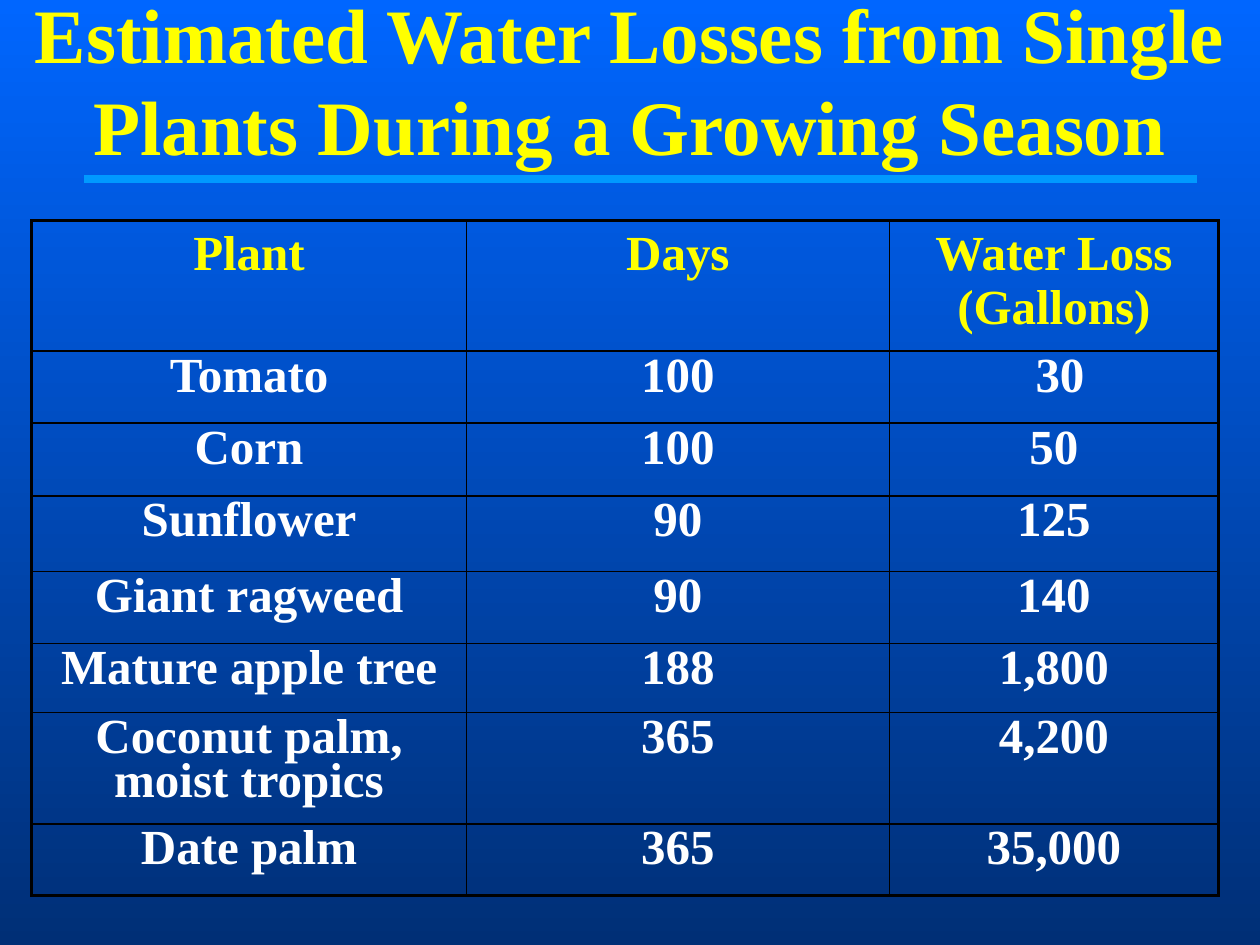
from lxml.etree import SubElement
from pptx import Presentation
from pptx.dml.color import RGBColor
from pptx.enum.shapes import MSO_CONNECTOR
from pptx.enum.text import MSO_ANCHOR, PP_ALIGN
from pptx.oxml.ns import qn
from pptx.util import Cm, Pt

BLUE_TOP = RGBColor(0x00, 0x66, 0xFF)
BLUE_BOTTOM = RGBColor(0x00, 0x2F, 0x76)
RULE_BLUE = RGBColor(0x00, 0x99, 0xFF)
YELLOW = RGBColor(0xFF, 0xFF, 0x00)
WHITE = RGBColor(0xFF, 0xFF, 0xFF)
BLACK = RGBColor(0x00, 0x00, 0x00)
FONT = "Times New Roman"

WATER_LOSSES = [
    ("Plant", "Days", "Water Loss (Gallons)"),
    ("Tomato", "100", " 30"),
    ("Corn", "100", "50"),
    ("Sunflower", "90", "125"),
    ("Giant ragweed", "90", "140"),
    ("Mature apple tree", "188", "1,800"),
    ("Coconut palm, moist tropics", "365", "4,200"),
    ("Date palm", "365", "35,000"),
]
COLUMN_WIDTHS = [8.76, 8.53, 6.63]
ROW_HEIGHTS = [2.54, 1.45, 1.47, 1.52, 1.45, 1.4, 2.24, 1.45]


def write_centred(paragraph, text, size, color):
    paragraph.alignment = PP_ALIGN.CENTER
    run = paragraph.add_run()
    run.text = text
    run.font.name = FONT
    run.font.size = Pt(size)
    run.font.bold = True
    run.font.color.rgb = color


def add_border(cell, side, width):
    """Draw one cell edge; side is L, R, T or B, called in that order."""
    edge = SubElement(cell._tc.get_or_add_tcPr(), qn(f"a:ln{side}"), w=str(Pt(width)))
    edge_fill = SubElement(edge, qn("a:solidFill"))
    SubElement(edge_fill, qn("a:srgbClr"), val=str(BLACK))


prs = Presentation()
prs.slide_width, prs.slide_height = Cm(25.4), Cm(19.05)
slide = prs.slides.add_slide(prs.slide_layouts[6])

backdrop = slide.background.fill
backdrop.gradient()
backdrop.gradient_angle = 270
for stop, color in zip(backdrop.gradient_stops, (BLUE_TOP, BLUE_BOTTOM)):
    stop.color.rgb = color

# Title
title = slide.shapes.add_textbox(0, 0, prs.slide_width, Cm(3.18)).text_frame
title.word_wrap = True
title.vertical_anchor = MSO_ANCHOR.MIDDLE
write_centred(
    title.paragraphs[0],
    "Estimated Water Losses from Single Plants During a Growing Season",
    44,
    YELLOW,
)

# Water loss table
losses = slide.shapes.add_table(
    len(ROW_HEIGHTS), len(COLUMN_WIDTHS), Cm(0.64), Cm(4.45),
    Cm(sum(COLUMN_WIDTHS)), Cm(sum(ROW_HEIGHTS)),
).table
losses.first_row = False
losses.horz_banding = False
for column, width in zip(losses.columns, COLUMN_WIDTHS):
    column.width = Cm(width)
for row, height in zip(losses.rows, ROW_HEIGHTS):
    row.height = Cm(height)

last_row, last_column = len(ROW_HEIGHTS) - 1, len(COLUMN_WIDTHS) - 1
for r, entries in enumerate(WATER_LOSSES):
    for c, entry in enumerate(entries):
        cell = losses.cell(r, c)
        outer_edges = {"L": c == 0, "R": c == last_column, "T": r == 0, "B": r == last_row}
        for side, is_outer in outer_edges.items():
            add_border(cell, side, 2.25 if is_outer else 1)
        cell.fill.background()
        paragraph = cell.text_frame.paragraphs[0]
        if r > 0:
            paragraph.line_spacing = 0.8
        write_centred(paragraph, entry, 28, WHITE if r > 0 else YELLOW)

# Rule under the title
title_rule = slide.shapes.add_connector(
    MSO_CONNECTOR.STRAIGHT, Cm(1.7), Cm(3.6), Cm(24.13), Cm(3.6)
)
title_rule.line.color.rgb = RULE_BLUE
title_rule.line.width = Pt(4.5)
SubElement(title_rule._element.spPr, qn("a:effectLst"))

prs.save("out.pptx")
